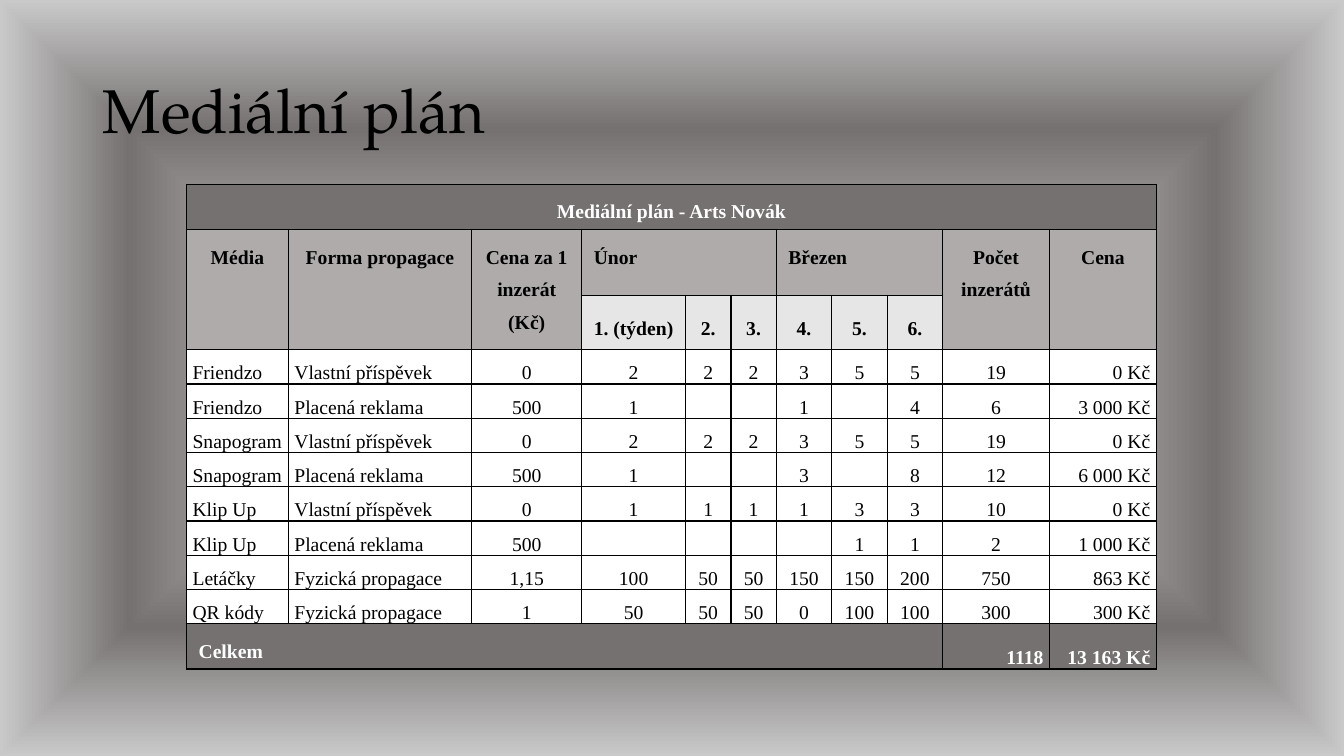
from lxml import etree
from pptx import Presentation, util as u
from pptx.dml.color import RGBColor
from pptx.enum import text
from pptx.oxml import parse_xml
from pptx.oxml.ns import qn

NS = 'xmlns:a="http://schemas.openxmlformats.org/drawingml/2006/main"'
C = {"black": "000000", "white": "FFFFFF", "dark": "767171", "mid": "AFABAB", "light": "E7E6E6"}
BACKDROP = [(0, "EDEDED"), (6, "DBDBDB"), (66, "767171"), (100, "C9C9C9")]
COLS = [1.01, 1.82, 1.09, 1.03, 0.45, 0.45, 0.55, 0.55, 0.55, 1.06, 1.06]
ROWS = [0.45, 0.65, 0.54] + [0.34] * 8 + [0.45]
PLAN = [
    ["Mediální plán - Arts Novák"] + [""] * 10,
    ["Média", "Forma propagace", "Cena za 1 inzerát (Kč)", "Únor", "", "",
     "Březen", "", "", "Počet inzerátů", "Cena"],
    ["", "", "", "1. (týden)", "2.", "3.", "4.", "5.", "6.", "", ""],
    ["Friendzo", "Vlastní příspěvek", "0", "2", "2", "2", "3", "5", "5", "19", "0 Kč"],
    ["Friendzo", "Placená reklama", "500", "1", "", "", "1", "", "4", "6", "3 000 Kč"],
    ["Snapogram", "Vlastní příspěvek", "0", "2", "2", "2", "3", "5", "5", "19", "0 Kč"],
    ["Snapogram", "Placená reklama", "500", "1", "", "", "3", "", "8", "12", "6 000 Kč"],
    ["Klip Up", "Vlastní příspěvek", "0", "1", "1", "1", "1", "3", "3", "10", "0 Kč"],
    ["Klip Up", "Placená reklama", "500", "", "", "", "", "1", "1", "2", "1 000 Kč"],
    ["Letáčky", "Fyzická propagace", "1,15", "100", "50", "50", "150", "150", "200", "750", "863 Kč"],
    ["QR kódy", "Fyzická propagace", "1", "50", "50", "50", "0", "100", "100", "300", "300 Kč"],
    ["Celkem"] + [""] * 8 + ["1118", "13 163 Kč"],
]
LAST = len(ROWS) - 1
MERGES = [(0, 0, 0, 10), (1, 3, 1, 5), (1, 6, 1, 8), (LAST, 0, LAST, 8)]
MERGES += [(1, c, 2, c) for c in (0, 1, 2, 9, 10)]
A, V = text.PP_ALIGN, text.MSO_ANCHOR


def style(p, size, name, color, bold=False):
    p.font.size, p.font.name, p.font.bold = u.Pt(size), name, bold
    p.font.color.rgb = RGBColor.from_string(C[color])


def add_borders(cell):
    tc_pr = cell._tc.get_or_add_tcPr()
    for side in "LRTB":
        tc_pr.append(parse_xml(
            f'<a:ln{side} {NS} w="12700"><a:solidFill><a:srgbClr val="{C["black"]}"/>'
            f'</a:solidFill></a:ln{side}>'))


prs = Presentation()
prs.slide_width, prs.slide_height = u.Inches(13.33), u.Inches(7.5)
s = prs.slides.add_slide(prs.slide_layouts[5])

s.background.fill.gradient()
grad = s.background._cSld.find(".//" + qn("a:gradFill"))
stops = "".join(f'<a:gs pos="{pos * 1000}"><a:srgbClr val="{color}"/></a:gs>' for pos, color in BACKDROP)
grad.getparent().replace(grad, parse_xml(
    f'<a:gradFill {NS} rotWithShape="1"><a:gsLst>{stops}</a:gsLst><a:path path="shape">'
    '<a:fillToRect l="50000" t="50000" r="50000" b="50000"/></a:path></a:gradFill>'))

title = s.shapes.title
title.left, title.top, title.width, title.height = [u.Inches(v) for v in (0.92, 0.4, 10.27, 1.45)]
tf = title.text_frame
tf.text = "Mediální plán"
tf.vertical_anchor = V.MIDDLE
p = tf.paragraphs[0]
p.alignment, p.line_spacing = A.LEFT, 0.9
style(p, 44, "TeX Gyre Pagella", "black")

tbl = s.shapes.add_table(len(ROWS), len(COLS), u.Inches(1.85), u.Inches(1.83),
                         u.Inches(sum(COLS)), u.Inches(sum(ROWS))).table
tbl.first_row = tbl.horz_banding = False
for column, width in zip(tbl.columns, COLS):
    column.width = u.Inches(width)
for row, height in zip(tbl.rows, ROWS):
    row.height = u.Inches(height)
for top, left, bottom, right in MERGES:
    tbl.cell(top, left).merge(tbl.cell(bottom, right))

for r, values in enumerate(PLAN):
    for c, value in enumerate(values):
        cell = tbl.cell(r, c)
        edge = r in (0, LAST)
        heading = r < 3 or edge
        roomy = r < 2 or (r == LAST and c == 0)
        fill = "dark" if edge else "white" if r > 2 else "light" if r == 2 and 3 <= c <= 8 else "mid"
        add_borders(cell)
        cell.fill.solid()
        cell.fill.fore_color.rgb = RGBColor.from_string(C[fill])
        cell.margin_left = cell.margin_right = u.Inches(0.12 if roomy else 0.06)
        cell.margin_top = u.Inches(0.06 if roomy else 0.01)
        cell.margin_bottom = u.Inches(0.06 if roomy else 0)
        if not value:
            continue
        cell.text = value
        cell.vertical_anchor = V.TOP if roomy else V.MIDDLE if r == 2 else V.BOTTOM
        p = cell.text_frame.paragraphs[0]
        p.line_spacing, p.space_after = 1.5, u.Pt(6)
        if value in ("Únor", "Březen") or (r > 2 and c < 2):
            p.alignment = A.LEFT
        elif r == LAST or (r > 2 and c == 10):
            p.alignment = A.RIGHT
        else:
            p.alignment = A.CENTER
        style(p, 14, "Times New Roman", "white" if edge else "black", heading)

prs.save("out.pptx")
